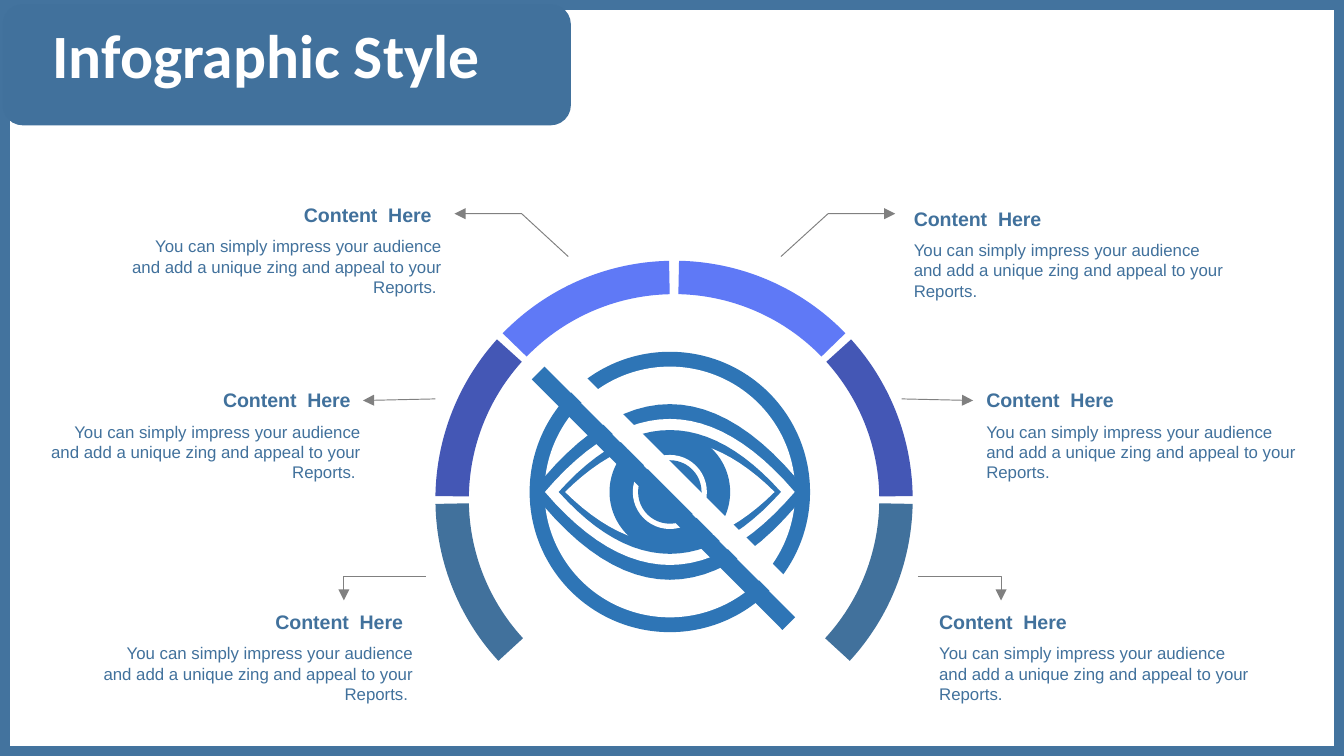
import pptx
import pptx.util
import pptx.dml.color
import pptx.enum.shapes
import pptx.enum.text
import pptx.oxml.ns
import lxml.etree

Cm, Pt = pptx.util.Cm, pptx.util.Pt
KIND = pptx.enum.shapes.MSO_SHAPE
ALIGN = pptx.enum.text.PP_ALIGN

HUES = {"frame": "43739E", "steel": "41719C", "indigo": "4457B5",
        "sky": "5F79F6", "eye": "2E75B6", "grey": "808080", "white": "FFFFFF"}

TITLE = "Infographic Style"
HEAD = "Content  Here"
BODY = "You can simply impress your audience and add a unique zing and appeal to your Reports."

RIGHT = [(17.02, 3.78), (18.39, 7.21), (17.5, 11.4)]
LEFT = [(2.24, 3.71), (0.71, 7.21), (1.7, 11.4)]

ARCS = [("steel", 1.1, 42.6), ("indigo", 317.9, 359.2), ("sky", 271.2, 315.9)]

ARROWS = [
    [(14.76, 4.85), (15.65, 4.04), (16.92, 4.04)],
    [(10.74, 4.85), (9.86, 4.04), (8.59, 4.04)],
    [(17.04, 7.54), (18.39, 7.57)],
    [(8.23, 7.54), (6.86, 7.57)],
    [(8.05, 10.9), (6.5, 10.9), (6.5, 11.35)],
    [(17.35, 10.9), (18.92, 10.9), (18.92, 11.35)],
]

MID_X, MID_Y = 12.66, 9.3
GLOBE = [("eye", 2.65), ("white", 2.37)]
LIDS = [("eye", 2.6, 1.66), ("white", 2.36, 1.38), ("eye", 2.1, 1.17), ("white", 1.98, 0.98)]
IRIS = [("eye", 1.14), ("white", 0.7), ("eye", 0.6)]
SLASH = [("white", 0.15, 0.4), ("eye", -0.12, 0.34)]


def tint(name):
    return pptx.dml.color.RGBColor.from_string(HUES[name])


def paint(shape, hue):
    shape.shadow.inherit = False
    shape.fill.solid()
    shape.fill.fore_color.rgb = tint(hue)
    shape.line.fill.background()


def block(shapes, kind, box, hue):
    shape = shapes.add_shape(kind, *map(Cm, box))
    paint(shape, hue)
    return shape


def write(shapes, box, text, size, hue, font="Arial", bold=False, align=ALIGN.LEFT):
    frame = shapes.add_textbox(*map(Cm, box)).text_frame
    frame.word_wrap = True
    frame.text = text
    line = frame.paragraphs[0]
    line.alignment = align
    face = line.runs[0].font
    face.name, face.size, face.bold = font, Pt(size), bold
    face.color.rgb = tint(hue)
    return frame


def note(shapes, left, top, wide, trim, text, align):
    for box, words, size, bold in (
            ((left, top, wide - trim, 0.71), HEAD, 10.5, True),
            ((left, top + 0.63, wide, 1.42), text, 9, False)):
        frame = write(shapes, box, words, size, "steel", bold=bold, align=align)
        frame.auto_size = pptx.enum.text.MSO_AUTO_SIZE.SHAPE_TO_FIT_TEXT


def trace(shapes, dots, close):
    dots = [(Cm(x), Cm(y)) for x, y in dots]
    pen = shapes.build_freeform(*dots[0], scale=1.0)
    pen.add_line_segments(dots[1:], close=close)
    shape = pen.convert_to_shape()
    shape.shadow.inherit = False
    return shape


def arrow(shapes, dots):
    if len(dots) == 2:
        shape = shapes.add_connector(pptx.enum.shapes.MSO_CONNECTOR.STRAIGHT,
                                     *(Cm(v) for dot in dots for v in dot))
        lxml.etree.SubElement(shape._element.spPr, pptx.oxml.ns.qn("a:effectLst"))
    else:
        shape = trace(shapes, dots, False)
        shape.fill.background()
    shape.line.color.rgb = tint("grey")
    shape.line.width = Pt(0.5)
    tail = lxml.etree.SubElement(shape.line._get_or_add_ln(), pptx.oxml.ns.qn("a:tailEnd"))
    tail.set("type", "triangle")


def discs(shapes, rounds, y):
    for hue, r in rounds:
        block(shapes, KIND.OVAL, (MID_X - r, y - r, 2 * r, 2 * r), hue)


def lid(shapes, hue, wide, high, y, steps=12):
    spans = [i / steps for i in range(-steps, steps + 1)]
    dots = [(MID_X + wide * t, y + side * high * (1 - t * t))
            for side in (-1, 1) for t in spans[::-side]]
    paint(trace(shapes, dots, True), hue)


def draw_eye(shapes):
    discs(shapes, GLOBE, MID_Y)
    for hue, wide, high in LIDS:
        lid(shapes, hue, wide, high, MID_Y)
    discs(shapes, IRIS, MID_Y)
    span = 6.7
    for hue, shift, thick in SLASH:
        box = (MID_X + shift - span / 2, MID_Y - shift - thick / 2, span, thick)
        block(shapes, KIND.RECTANGLE, box, hue).rotation = 45


def main():
    deck = pptx.Presentation()
    deck.slide_width, deck.slide_height = Cm(25.4), Cm(14.29)
    shapes = deck.slides.add_slide(deck.slide_layouts[6]).shapes

    frame = shapes.add_shape(KIND.RECTANGLE, 0, 0, deck.slide_width, deck.slide_height)
    frame.shadow.inherit = False
    frame.fill.background()
    frame.line.color.rgb = tint("frame")
    frame.line.width = Pt(10.75)

    block(shapes, KIND.ROUNDED_RECTANGLE, (0.05, 0.08, 10.74, 2.29), "steel")
    title = write(shapes, (0.74, 0.36, 24.1, 1.75), TITLE, 33, "white", "Calibri", True)
    title.paragraphs[0].line_spacing = 0.9

    for hue, start, end in ARCS:
        for a, b in ((start, end), ((540 - end) % 360, (540 - start) % 360)):
            arc = block(shapes, KIND.BLOCK_ARC, (8.23, 4.93, 9.02, 9.02), hue)
            for i, value in enumerate((a * 0.6, b * 0.6, 0.07)):
                arc.adjustments[i] = value

    for left, top in RIGHT:
        note(shapes, left, top, 6.45, 0, BODY, ALIGN.LEFT)
    for left, top in LEFT:
        note(shapes, left, top, 6.35, 0.18, BODY + " ", ALIGN.RIGHT)
    for dots in ARROWS:
        arrow(shapes, dots)
    draw_eye(shapes)

    deck.save("out.pptx")


if __name__ == "__main__":
    main()
